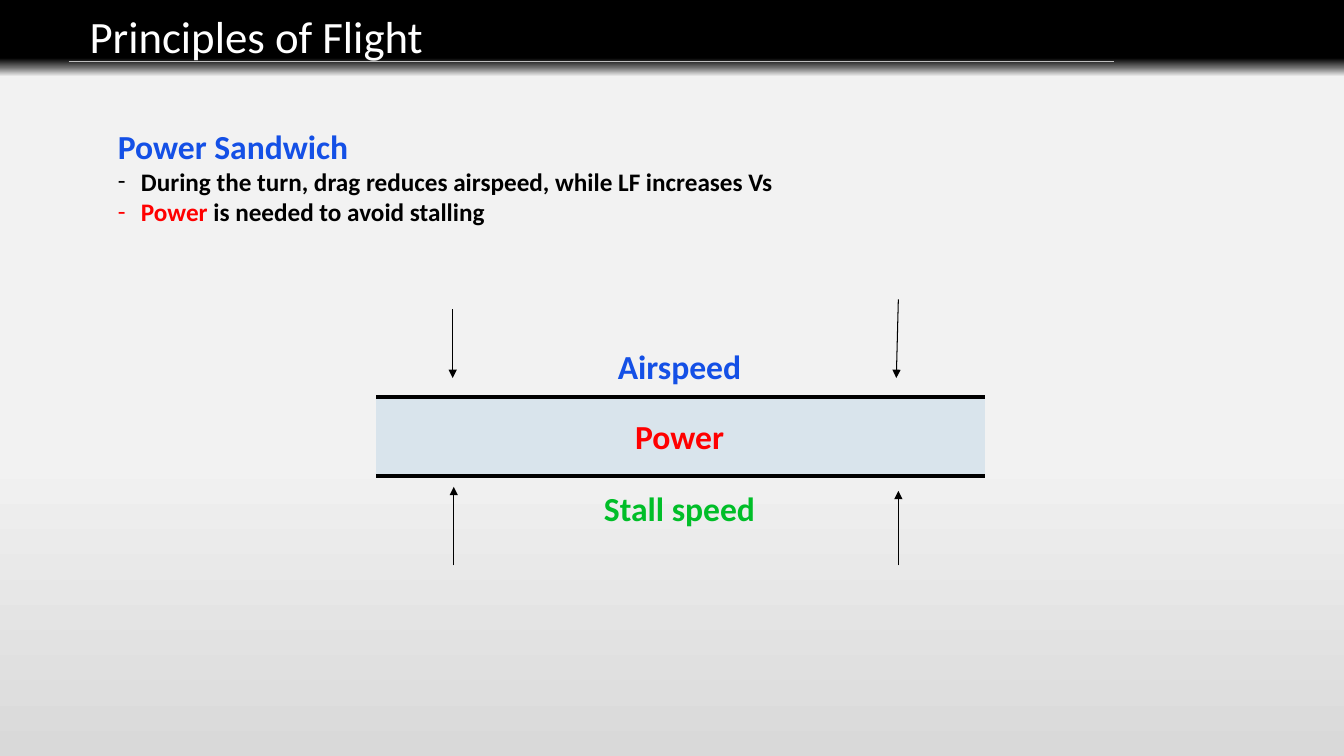
from lxml.etree import SubElement
from pptx import Presentation
from pptx.dml.color import RGBColor
from pptx.enum.shapes import MSO_CONNECTOR, MSO_SHAPE
from pptx.enum.text import PP_ALIGN
from pptx.oxml.ns import qn
from pptx.util import Inches, Pt

BLACK = RGBColor(0x00, 0x00, 0x00)
WHITE = RGBColor(0xFF, 0xFF, 0xFF)
BLUE = RGBColor(0x14, 0x50, 0xE6)
RED = RGBColor(0xFF, 0x00, 0x00)
GREEN = RGBColor(0x00, 0xBE, 0x28)
BAND = RGBColor(0x00, 0x70, 0xC0)
RULE = RGBColor(0xBF, 0xBF, 0xBF)
FADE = RGBColor(0x6D, 0x6D, 0x6D)
LIGHT = RGBColor(0xF2, 0xF2, 0xF2)
GREY = RGBColor(0xD9, 0xD9, 0xD9)


def set_gradient(fill, element, stops):
    fill.gradient()
    fill.gradient_angle = 270
    gs_list = element.find(".//" + qn("a:gsLst"))
    for gs in list(gs_list):
        gs_list.remove(gs)
    for pos, color in stops:
        gs = SubElement(gs_list, qn("a:gs"), pos=str(pos * 1000))
        SubElement(gs, qn("a:srgbClr"), val=str(color))


def add_text(box, paragraphs, size, bold, align=PP_ALIGN.LEFT):
    tf = s.shapes.add_textbox(*[Inches(v) for v in box]).text_frame
    tf.word_wrap = True
    for i, runs in enumerate(paragraphs):
        p = tf.paragraphs[0] if i == 0 else tf.add_paragraph()
        p.alignment = align
        for text, color in runs:
            r = p.add_run()
            r.text = text
            r.font.name = "Calibri"
            r.font.size = Pt(size)
            r.font.bold = bold
            r.font.color.rgb = color
    return tf


prs = Presentation()
prs.slide_width, prs.slide_height = Inches(13.33), Inches(7.5)
s = prs.slides.add_slide(prs.slide_layouts[6])
set_gradient(s.background.fill, s.element, [(0, LIGHT), (60, LIGHT), (100, GREY)])

left, right, top, bottom = 3.73, 9.77, 3.94, 4.72
band = s.shapes.add_shape(MSO_SHAPE.RECTANGLE, Inches(left), Inches(top),
                          Inches(right - left), Inches(bottom - top))
band.shadow.inherit = False
band.line.fill.background()
band.fill.solid()
band.fill.fore_color.rgb = BAND
SubElement(band.element.find(".//" + qn("a:srgbClr")), qn("a:alpha"), val="10000")

header = s.shapes.add_shape(MSO_SHAPE.RECTANGLE, 0, 0, prs.slide_width, Inches(0.76))
header.shadow.inherit = False
header.line.fill.background()
set_gradient(header.fill, header.element,
             [(0, BLACK), (76, BLACK), (88, FADE), (100, LIGHT)])

lines = [
    (left, top, right, top, BLACK, 3, False),
    (left, bottom, right, bottom, BLACK, 3, False),
    (4.49, 3.07, 4.49, 3.75, BLACK, 0.75, True),
    (8.91, 2.97, 8.89, 3.75, BLACK, 0.75, True),
    (4.5, 5.61, 4.5, 4.83, BLACK, 0.75, True),
    (8.91, 5.61, 8.91, 4.87, BLACK, 0.75, True),
    (0.68, 0.61, 11.05, 0.61, RULE, 0.75, False),
]
for x1, y1, x2, y2, color, width, arrow in lines:
    c = s.shapes.add_connector(MSO_CONNECTOR.STRAIGHT, Inches(x1), Inches(y1),
                               Inches(x2), Inches(y2))
    c.line.color.rgb = color
    c.line.width = Pt(width)
    if arrow:
        SubElement(c.element.spPr.find(qn("a:ln")), qn("a:tailEnd"), type="triangle")
    SubElement(c.element.spPr, qn("a:effectLst"))

add_text((0.79, 0.04, 10.26, 0.64), [[("Principles of Flight", WHITE)]], 32, False)

tf = add_text((1.07, 1.2, 7.14, 1.11), [
    [("Power Sandwich", BLUE)],
    [("During the turn, drag reduces airspeed, while LF increases Vs", BLACK)],
    [("Power", RED), (" is needed to avoid stalling", BLACK)],
], 18, True)
tf.paragraphs[0].runs[0].font.size = Pt(24)
for p in tf.paragraphs[1:]:
    pPr = p._p.get_or_add_pPr()
    pPr.set("marL", str(Inches(0.23)))
    pPr.set("indent", str(-Inches(0.23)))
    SubElement(pPr, qn("a:buFont"), typeface="Calibri")
    SubElement(pPr, qn("a:buChar"), char="-")

for text, color, y in [("Airspeed", BLUE, 3.38), ("Power", RED, 4.08),
                       ("Stall speed", GREEN, 4.79)]:
    add_text((5.24, y, 3, 0.5), [[(text, color)]], 24, True, PP_ALIGN.CENTER)

prs.save("out.pptx")
